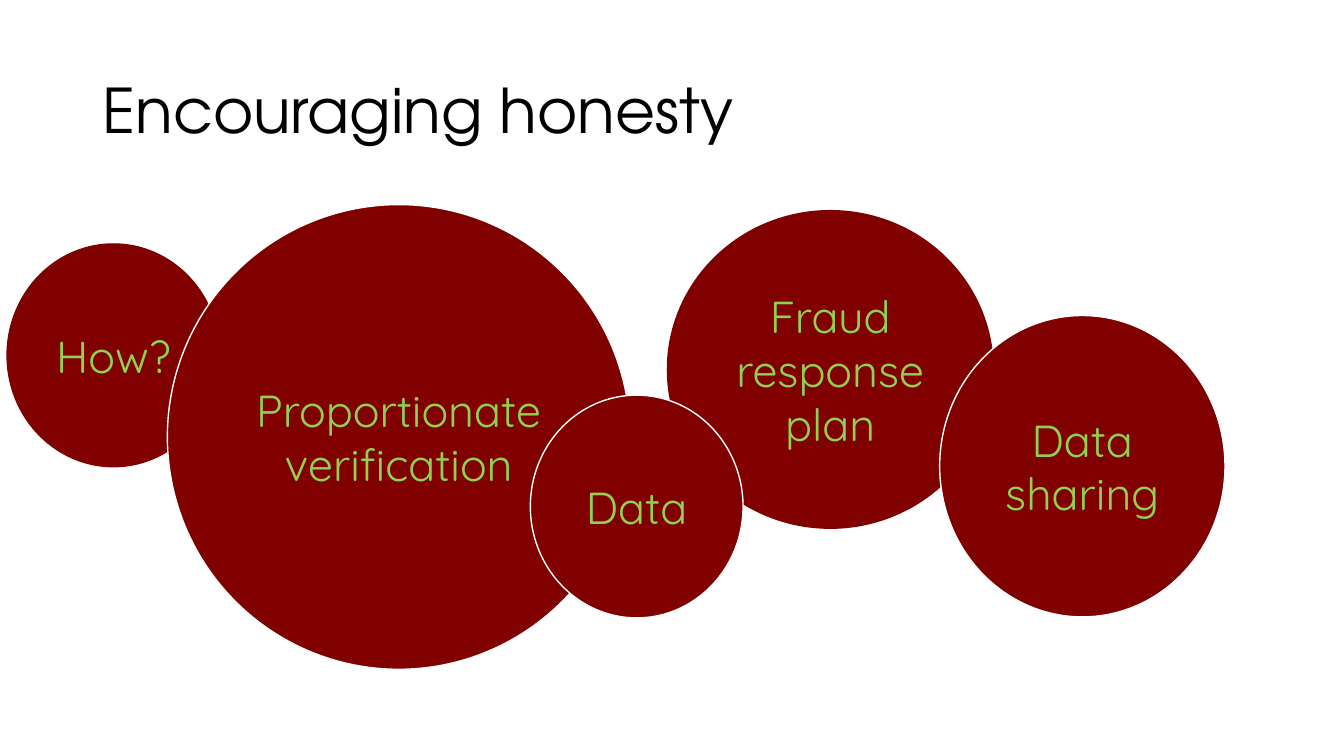
from dataclasses import dataclass

from pptx import Presentation
from pptx.dml.color import RGBColor as RGB
from pptx.enum.shapes import MSO_SHAPE as Shape
from pptx.enum.text import MSO_ANCHOR as Anchor, PP_ALIGN as Align
from pptx.util import Pt

PX = 9144  # EMU per px, 100 px to the inch


@dataclass(frozen=True)
class Theme:
    paper: RGB = RGB.from_string("FFFFFF")
    ink: RGB = RGB.from_string("000000")
    maroon: RGB = RGB.from_string("800000")
    lime: RGB = RGB.from_string("92D050")
    title_font: str = "TeX Gyre Adventor"
    bubble_font: str = "Quicksand"
    title_size: int = 44
    bubble_size: int = 32
    outline: int = 1


THEME = Theme()

# Label, box (left, top, width, height), outline colour; back to front
BUBBLES = [
    ("How?", (7, 242, 211, 221), THEME.maroon),
    ("Proportionate verification", (166, 203, 459, 461), THEME.paper),
    ("Fraud response plan", (662, 209, 323, 315), THEME.maroon),
    ("Data sharing", (932, 313, 283, 299), THEME.paper),
    ("Data", (526, 392, 211, 221), THEME.paper),
]


def to_emu(box):
    return [length * PX for length in box]


def write(frame, words, font_name, size, color):
    frame.word_wrap = True
    frame.vertical_anchor = Anchor.MIDDLE
    paragraph = frame.paragraphs[0]
    run = paragraph.add_run()
    run.text = words
    run.font.name = font_name
    run.font.size = Pt(size)
    run.font.color.rgb = color
    return paragraph


def add_title(slide, box, words):
    title = slide.shapes.add_textbox(*to_emu(box))
    line = write(title.text_frame, words, THEME.title_font, THEME.title_size, THEME.ink)
    line.line_spacing = 0.9


def add_bubble(slide, box, label, outline):
    bubble = slide.shapes.add_shape(Shape.OVAL, *to_emu(box))
    bubble.shadow.inherit = False
    bubble.fill.solid()
    bubble.fill.fore_color.rgb = THEME.maroon
    bubble.line.color.rgb = outline
    bubble.line.width = Pt(THEME.outline)
    caption = write(bubble.text_frame, label, THEME.bubble_font, THEME.bubble_size, THEME.lime)
    caption.alignment = Align.CENTER


def main():
    deck = Presentation()
    deck.slide_width, deck.slide_height = to_emu((1333, 750))
    slide = deck.slides.add_slide(deck.slide_layouts[6])
    slide.background.fill.solid()
    slide.background.fill.fore_color.rgb = THEME.paper

    # Heading
    add_title(slide, (92, 40, 1150, 145), "Encouraging honesty")

    # Overlapping bubbles
    for label, box, outline in BUBBLES:
        add_bubble(slide, box, label, outline)

    deck.save("out.pptx")


if __name__ == "__main__":
    main()
